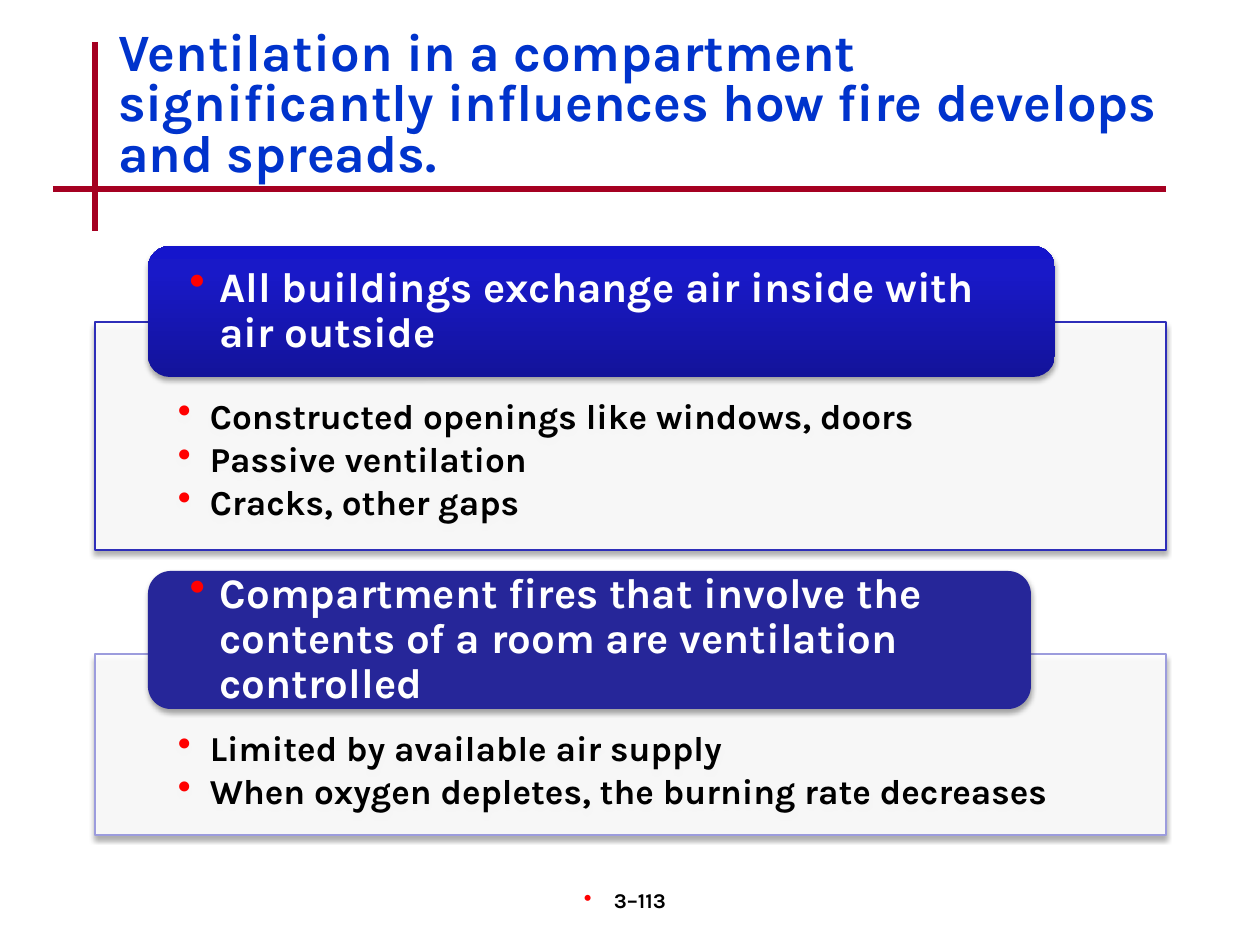
"""Build the slide on how ventilation influences fire development."""
from lxml import etree
from pptx import Presentation, util as u
from pptx.dml.color import RGBColor
from pptx.enum import shapes, text
from pptx.oxml import parse_xml
from pptx.oxml.ns import nsdecls, qn

PX = 914400 / 126
FONT = "Karla"
COLORS = {"rule": "A50021", "title": "0033CC", "bullet": "FF0000", "body": "000000",
          "white": "FFFFFF", "edge_1": "2E2EB9", "edge_2": "9C9CDD", "header": "262699"}
GRADIENT = [(0, "13139A"), (80, "1919C8"), (100, "1515CC")]
SHADOW = (f'<a:effectLst {nsdecls("a")}><a:outerShdw blurRad="39370" dist="22860" dir="5400000" '
          'rotWithShape="0"><a:srgbClr val="000000"><a:alpha val="35000"/></a:srgbClr>'
          '</a:outerShdw></a:effectLst>')


def px(*values):
    return [u.Emu(round(v * PX)) for v in values]


def write(tf, lines, size, color, insets, spacing=None, after=0, indent=0):
    tf.word_wrap = True
    tf.auto_size = text.MSO_AUTO_SIZE.NONE
    tf.margin_left, tf.margin_top, tf.margin_right, tf.margin_bottom = px(*insets)
    tf.text = "\n".join(lines)
    for p in tf.paragraphs:
        p.alignment = text.PP_ALIGN.LEFT
        if indent:
            pPr = p._p.get_or_add_pPr()
            pPr.set("marL", str(px(indent)[0]))
            pPr.set("indent", str(px(-indent)[0]))
            clr = etree.SubElement(pPr, qn("a:buClr"))
            etree.SubElement(clr, qn("a:srgbClr"), val=COLORS["bullet"])
            etree.SubElement(pPr, qn("a:buSzPct"), val="110000")
            etree.SubElement(pPr, qn("a:buChar"), char="•")
        p.line_spacing = spacing
        p.space_after = u.Pt(after)
        for r in p.runs:
            r.font.name, r.font.size, r.font.bold = FONT, u.Pt(size), True
            r.font.color.rgb = RGBColor.from_string(COLORS[color])


prs = Presentation()
prs.slide_width, prs.slide_height = px(1260, 945)
s = prs.slides.add_slide(prs.slide_layouts[5])

for ends in [(95, 42, 95, 231), (53, 189, 1166, 189)]:
    rule = s.shapes.add_connector(shapes.MSO_CONNECTOR.STRAIGHT, *px(*ends))
    rule.line.color.rgb = RGBColor.from_string(COLORS["rule"])
    rule.line.width = u.Pt(3)
    etree.SubElement(rule._element.spPr, qn("a:effectLst"))

title = s.shapes.title
title.left, title.top, title.width, title.height = px(105, 25, 1071, 126)
write(title.text_frame, ["Ventilation in a compartment significantly influences how fire "
                         "develops and spreads."], 30, "title", (13, 6, 13, 6), 0.8)
title.text_frame.vertical_anchor = text.MSO_ANCHOR.TOP

sections = [
    (322, 228, "edge_1", (246, 907, 131), "All buildings exchange air inside with air outside",
     ["Constructed openings like windows, doors", "Passive ventilation", "Cracks, other gaps"]),
    (654, 181, "edge_2", (571, 883, 138),
     "Compartment fires that involve the contents of a room are ventilation controlled",
     ["Limited by available air supply", "When oxygen depletes, the burning rate decreases"]),
]
for top, height, edge, (head_top, head_width, head_height), heading, points in sections:
    panel = s.shapes.add_shape(shapes.MSO_SHAPE.RECTANGLE, *px(95, top, 1071, height))
    panel.fill.solid()
    panel.fill.fore_color.rgb = RGBColor.from_string(COLORS["white"])
    fill_clr = panel._element.spPr.find(qn("a:solidFill"))[0]
    etree.SubElement(fill_clr, qn("a:alpha"), val="90000")
    panel.line.color.rgb = RGBColor.from_string(COLORS[edge])
    panel.line.width = u.Pt(0.75)
    write(panel.text_frame, points, 20, "body", (83, 77, 83, 20), 0.9, 3, 32)
    panel.text_frame.vertical_anchor = text.MSO_ANCHOR.TOP

    header = s.shapes.add_shape(shapes.MSO_SHAPE.ROUNDED_RECTANGLE,
                                *px(148, head_top, head_width, head_height))
    header.fill.solid()
    header.fill.fore_color.rgb = RGBColor.from_string(COLORS["header"])
    header.line.fill.background()
    write(header.text_frame, [heading], 24, "white", (35, 0, 35, 0), 0.9, 0, 30)
    header.text_frame.vertical_anchor = text.MSO_ANCHOR.MIDDLE

    if edge == "edge_1":
        stops = "".join(f'<a:gs pos="{pos * 1000}"><a:srgbClr val="{c}"/></a:gs>'
                        for pos, c in GRADIENT)
        grad = parse_xml(f'<a:gradFill {nsdecls("a")} rotWithShape="1"><a:gsLst>{stops}</a:gsLst>'
                         '<a:lin ang="16200000" scaled="0"/></a:gradFill>')
        spPr = header._element.spPr
        spPr.replace(spPr.find(qn("a:solidFill")), grad)
    for sp in (panel, header):
        sp._element.spPr.append(parse_xml(SHADOW))

number = s.shapes.add_textbox(*px(494, 882, 262, 63))
write(number.text_frame, ["3–113"], 12, "body", (13, 6, 13, 6), indent=30)
number.text_frame.paragraphs[0].alignment = text.PP_ALIGN.CENTER

prs.save("out.pptx")
